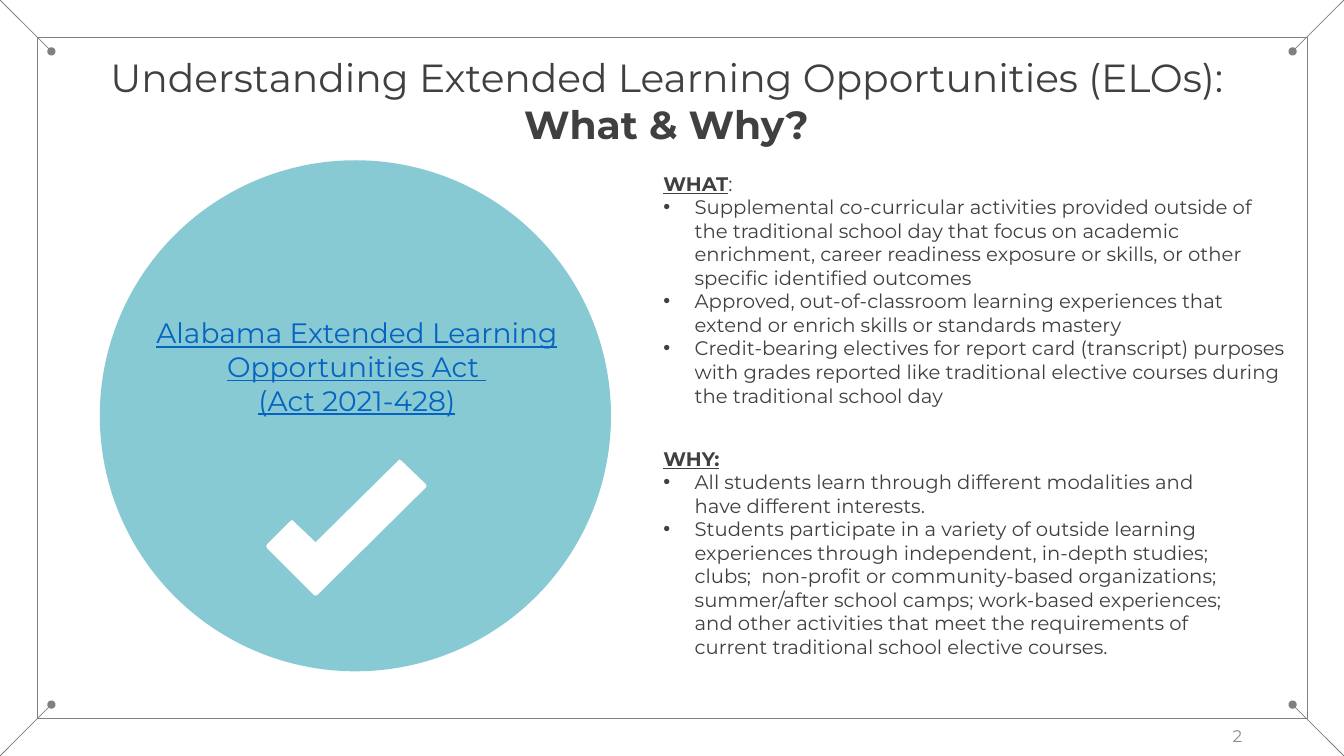
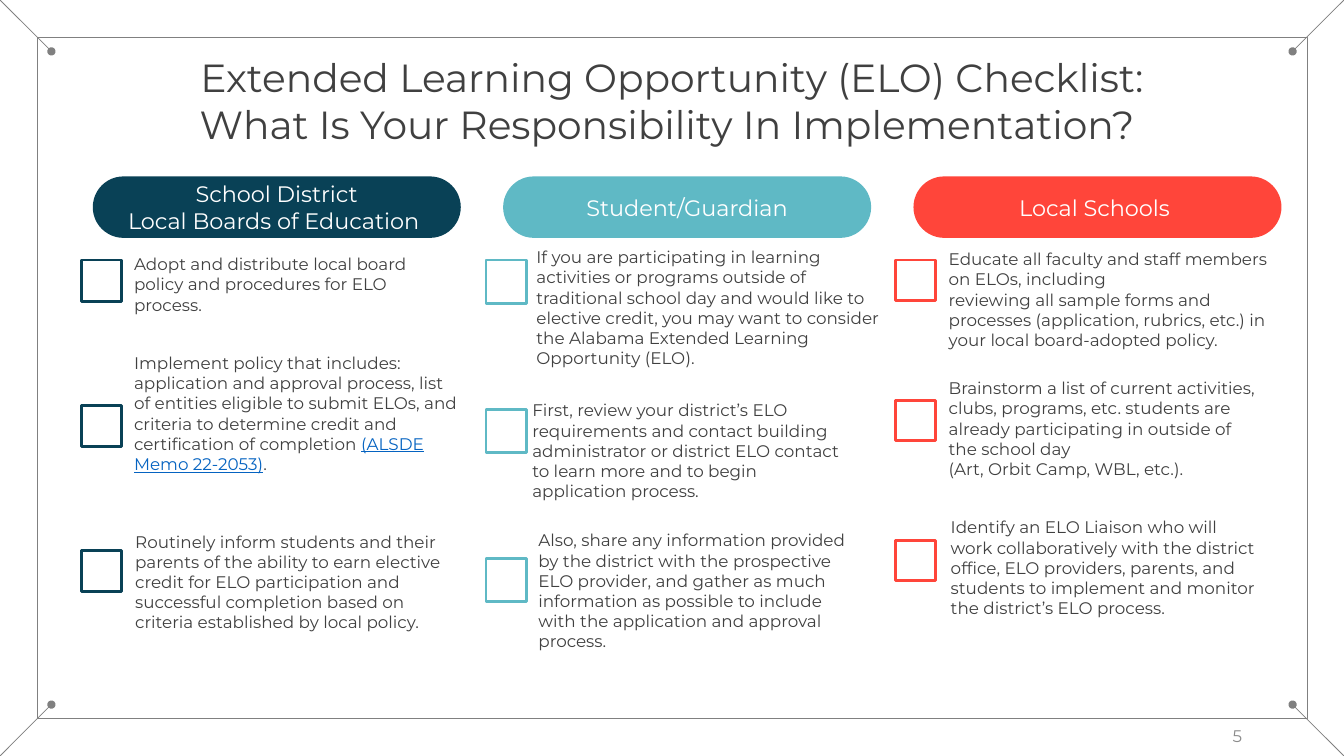
from lxml.etree import SubElement
from pptx import Presentation
from pptx.dml.color import RGBColor
from pptx.enum.shapes import MSO_CONNECTOR, MSO_SHAPE
from pptx.enum.text import MSO_ANCHOR, PP_ALIGN
from pptx.oxml.ns import qn
from pptx.util import Emu, Pt

# Shared look: 100 px to the inch
PX = 9144
WIDE, HIGH = 1333, 750
FONT = "Montserrat"
DARK = RGBColor(0x40, 0x40, 0x40)
GRAY = RGBColor(0x80, 0x80, 0x80)
PALE = RGBColor(0x8C, 0x8C, 0x8C)
LINK = RGBColor(0x05, 0x63, 0xC1)
WHITE = RGBColor(0xFF, 0xFF, 0xFF)
NAVY = RGBColor(0x09, 0x41, 0x56)
TEAL = RGBColor(0x5F, 0xB9, 0xC5)
CORAL = RGBColor(0xFF, 0x45, 0x3A)
LEFT, MID, RIGHT = PP_ALIGN.LEFT, PP_ALIGN.CENTER, PP_ALIGN.RIGHT

# Content. A paragraph is a string or a list of (text, marks):
# b bold, u underlined, l link colour
TITLE_1 = ["Understanding Extended Learning Opportunities (ELOs): ",
           [("What & Why? ", "b")]]
ACT = [[("Alabama Extended Learning Opportunities Act ", "ul")],
       [("(Act 2021-428)", "ul")]]
PANELS = [  # box, heading, bullets
    ((658, 169, 620, 236), [("WHAT", "bu"), (":", "")], [
        "Supplemental co-curricular activities provided outside of the "
        "traditional school day that focus on academic enrichment, career "
        "readiness exposure or skills, or other specific identified outcomes",
        "Approved, out-of-classroom learning experiences that extend or "
        "enrich skills or standards mastery",
        "Credit-bearing electives for report card (transcript) purposes with "
        "grades reported like traditional elective courses during the "
        "traditional school day"]),
    ((658, 442, 565, 212), [("WHY:", "bu")], [
        "All students learn through different modalities and have different "
        "interests.",
        "Students participate in a variety of outside learning experiences "
        "through independent, in-depth studies; clubs;  non-profit or "
        "community-based organizations; summer/after school camps; work-based "
        "experiences; and other activities that meet the requirements of "
        "current traditional school elective courses."]),
]
CHECK = [(422, 480), (398, 457), (396, 456), (395, 457), (313, 538),
         (291, 517), (290, 516), (288, 517), (265, 540), (264, 542),
         (265, 544), (311, 590), (313, 591), (315, 590), (422, 484),
         (423, 482)]

TITLE_2 = ["Extended Learning Opportunity (ELO) Checklist:",
           "What Is Your Responsibility In Implementation? "]
COLUMNS = [  # colour, heading, box left, box height, box step, (text box, text)
    (NAVY, ["School District", "Local Boards of Education "], 81, 41, 144, [
        ((133, 252, 310, 61),
         ["Adopt and distribute local board policy and procedures for ELO "
          "process."]),
        ((133, 350, 326, 121),
         [[("Implement policy that includes: application and approval "
            "process, list of entities eligible to submit ELOs, and criteria "
            "to determine credit and certification of completion ", ""),
           ("(ALSDE Memo 22-2053)", "ul"), (".", "")]]),
        ((134, 527, 315, 101),
         ["Routinely inform students and their parents of the ability to "
          "earn elective credit for ELO participation and successful "
          "completion based on criteria established by local policy."])]),
    (TEAL, ["Student/Guardian"], 482, 43, 148, [
        ((532, 245, 345, 121),
         ["If you are participating in learning activities or programs "
          "outside of traditional school day and would like to elective "
          "credit, you may want to consider the Alabama Extended Learning "
          "Opportunity (ELO)."]),
        ((528, 397, 311, 101),
         ["First, review your district’s ELO requirements and contact "
          "building administrator or district ELO contact to learn more and "
          "to begin application process."]),
        ((534, 526, 310, 121),
         ["Also, share any information provided by the district with the "
          "prospective ELO provider, and gather as much information as "
          "possible to include with the application and approval process."])]),
    (CORAL, ["Local Schools "], 888, 40, 139, [
        ((941, 247, 326, 101),
         ["Educate all faculty and staff members on ELOs, including",
          "reviewing all sample forms and processes (application, rubrics, "
          "etc.) in your local board-adopted policy."]),
        ((941, 375, 310, 121),
         ["Brainstorm a list of current activities, clubs, programs, etc. "
          "students are already participating in outside of the school day",
          "(Art, Orbit Camp, WBL, etc.)."]),
        ((943, 513, 310, 101),
         ["Identify an ELO Liaison who will work collaboratively with the "
          "district office, ELO providers, parents, and students to "
          "implement and monitor the district’s ELO process."])]),
]


def px(*nums):
    return [Emu(num * PX) for num in nums]


def write(frame, paras, size, color=DARK, align=LEFT, anchor=MSO_ANCHOR.TOP):
    frame.word_wrap = True
    frame.vertical_anchor = anchor
    frame.margin_left = frame.margin_right = 0
    frame.margin_top = frame.margin_bottom = 0
    for num, runs in enumerate(paras):
        para = frame.add_paragraph() if num else frame.paragraphs[0]
        para.alignment = align
        for words, marks in [(runs, "")] if isinstance(runs, str) else runs:
            run = para.add_run()
            run.text = words
            font = run.font
            font.name, font.size = FONT, Pt(size)
            font.bold, font.underline = "b" in marks, "u" in marks
            font.color.rgb = LINK if "l" in marks else color


def label(slide, box, paras, size, **style):
    frame = slide.shapes.add_textbox(*px(*box)).text_frame
    write(frame, paras, size, **style)
    return frame


def paint(shape, fill=None, line=None, width=1):
    shape.shadow.inherit = False
    if fill is None:
        shape.fill.background()
    else:
        shape.fill.solid()
        shape.fill.fore_color.rgb = fill
    if line is None:
        shape.line.fill.background()
    else:
        shape.line.color.rgb = line
        shape.line.width = Pt(width)
    return shape


def draw(slide, kind, box, **look):
    return paint(slide.shapes.add_shape(kind, *px(*box)), **look)


def bullet(para):
    props = para._p.get_or_add_pPr()
    indent = 31 * PX
    props.set("marL", str(indent))
    props.set("indent", str(-indent))
    SubElement(props, qn("a:buFont"), typeface="Arial")
    SubElement(props, qn("a:buChar"), char="•")


def base(deck, title, page):
    """Add a slide with frame, corner pins, title and page number."""
    slide = deck.slides.add_slide(deck.slide_layouts[6])
    draw(slide, MSO_SHAPE.RECTANGLE, (37, 37, 1260, 676), line=GRAY)
    pin = 51
    for x, to_x in ((0, pin), (WIDE, WIDE - pin)):
        for y, to_y in ((0, pin), (HIGH, HIGH - pin)):
            wire = slide.shapes.add_connector(
                MSO_CONNECTOR.STRAIGHT, *px(x, y, to_x, to_y))
            wire.line.color.rgb = GRAY
            wire.line.width = Pt(0.5)
            SubElement(wire.line._get_or_add_ln(), qn("a:tailEnd"), type="oval")
            SubElement(wire._element.spPr, qn("a:effectLst"))
    label(slide, (0, 53, WIDE, 94), title, 28, align=MID)
    label(slide, (942, 710, 290, 40), [page], 12, color=PALE, align=RIGHT,
          anchor=MSO_ANCHOR.MIDDLE)
    return slide


def what_why(deck):
    slide = base(deck, TITLE_1, "2")
    # Circle with tick
    disc = draw(slide, MSO_SHAPE.OVAL, (99, 159, 507, 507), fill=TEAL)
    tint = disc._element.spPr.find(qn("a:solidFill"))[0]
    SubElement(tint, qn("a:alpha"), val="75000")
    pen = slide.shapes.build_freeform(*CHECK[0], scale=PX)
    pen.add_line_segments(CHECK[1:], close=True)
    paint(pen.convert_to_shape(), fill=WHITE)
    label(slide, (106, 313, 496, 101), ACT, 20, align=MID,
          anchor=MSO_ANCHOR.MIDDLE)
    # Bulleted panels
    for box, head, points in PANELS:
        frame = label(slide, box, [head, *points], 14,
                      anchor=MSO_ANCHOR.MIDDLE)
        for para in frame.paragraphs[1:]:
            bullet(para)


def checklist(deck):
    slide = base(deck, TITLE_2, "5")
    for col, (color, head, left, tall, step, items) in enumerate(COLUMNS):
        # Heading pill
        pill = draw(slide, MSO_SHAPE.ROUNDED_RECTANGLE,
                    (92 + 407 * col, 175, 365, 61), fill=color)
        pill.adjustments[0] = 0.5
        write(pill.text_frame, head, 16, WHITE, MID, MSO_ANCHOR.MIDDLE)
        # Tick boxes with their tasks
        for row, (box, paras) in enumerate(items):
            draw(slide, MSO_SHAPE.RECTANGLE,
                 (left, 258 + step * row, 40, tall), line=color, width=2)
            label(slide, box, paras, 12)


def main():
    deck = Presentation()
    deck.slide_width, deck.slide_height = px(WIDE, HIGH)
    what_why(deck)
    checklist(deck)
    deck.save("out.pptx")


if __name__ == "__main__":
    main()
